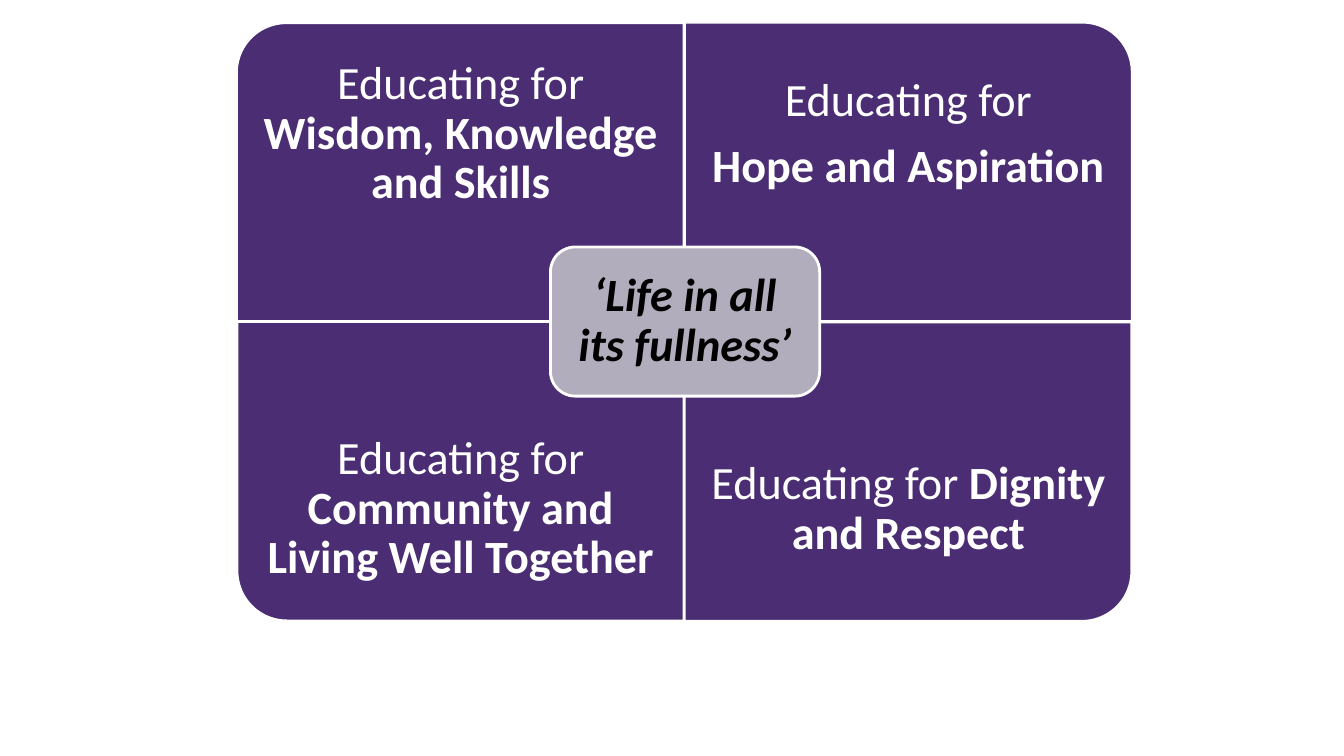
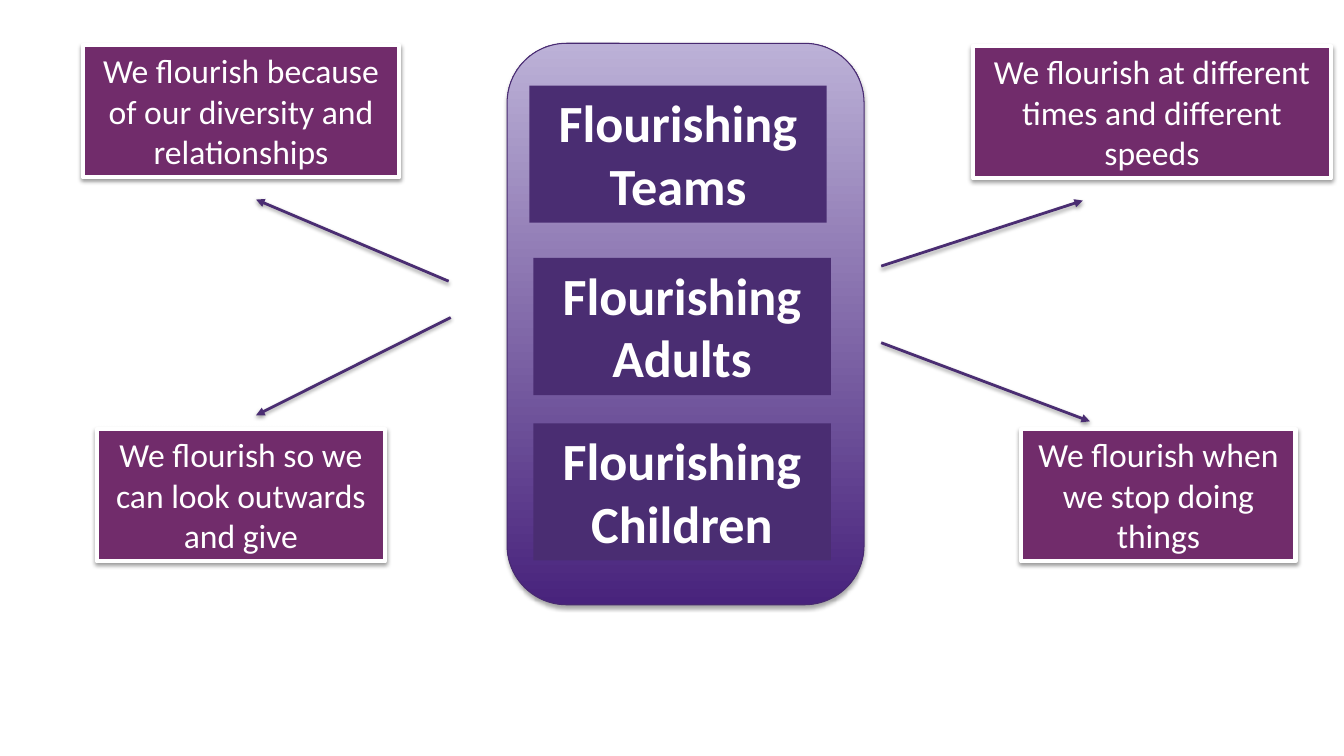
"""Build two slides on educating for fullness of life and on flourishing."""
from dataclasses import dataclass
from typing import Optional

from lxml import etree
from pptx import Presentation
from pptx.dml.color import RGBColor
from pptx.enum.shapes import MSO_CONNECTOR, MSO_SHAPE
from pptx.enum.text import MSO_ANCHOR, MSO_AUTO_SIZE, PP_ALIGN
from pptx.oxml.ns import qn
from pptx.shapes.autoshape import Shape
from pptx.slide import Slide
from pptx.util import Emu, Pt

RECT, ROUNDED = MSO_SHAPE.RECTANGLE, MSO_SHAPE.ROUNDED_RECTANGLE
ONE_ROUND = MSO_SHAPE.ROUND_1_RECTANGLE
STRAIGHT = MSO_CONNECTOR.STRAIGHT
TOP, MIDDLE = MSO_ANCHOR.TOP, MSO_ANCHOR.MIDDLE
GROW, FIXED = MSO_AUTO_SIZE.SHAPE_TO_FIT_TEXT, MSO_AUTO_SIZE.NONE
CENTER = PP_ALIGN.CENTER

PURPLE = RGBColor(0x4A, 0x2D, 0x72)
PLUM = RGBColor(0x71, 0x2C, 0x6B)
GREY = RGBColor(0xB2, 0xAD, 0xBC)
PANEL_DARK = RGBColor(0x48, 0x23, 0x7C)
PANEL_LIGHT = RGBColor(0xBC, 0xB1, 0xD7)
PANEL_EDGE = RGBColor(0x48, 0x2A, 0x71)
WHITE = RGBColor(0xFF, 0xFF, 0xFF)
BLACK = RGBColor(0x00, 0x00, 0x00)
FONT = "Calibri"
BLANK_LAYOUT = 6
EMU_PER_PX = 9144

GRID_LEFT, GRID_TOP = 235, 22
CELL_WIDTH, CELL_HEIGHT, CELL_TEXT_HEIGHT = 444, 297, 222
HUB_WIDTH, HUB_HEIGHT, HUB_MARGIN = 267, 148, 7


def px(length: float) -> Emu:
    """Turn px into EMU."""
    return Emu(round(length * EMU_PER_PX))


@dataclass(frozen=True)
class Frame:
    """Place and size in px."""

    left: int
    top: int
    width: int
    height: int

    def emu(self) -> tuple[Emu, Emu, Emu, Emu]:
        """Return the frame in EMU."""
        return px(self.left), px(self.top), px(self.width), px(self.height)


@dataclass(frozen=True)
class Span:
    """Run of text with its weight."""

    text: str
    bold: bool = False
    italic: bool = False


@dataclass(frozen=True)
class Quadrant:
    """Grid cell with the turn that puts its round corner outside."""

    column: int
    row: int
    rotation: int
    paras: list[list[Span]]


@dataclass(frozen=True)
class Callout:
    """Statement box and the arrow that points to it."""

    text: str
    frame: Frame
    start: tuple[int, int]
    end: tuple[int, int]


LEAD = "Educating for "
QUADRANTS = [
    Quadrant(0, 0, 270, [[Span(LEAD), Span("Wisdom, Knowledge and Skills", True)]]),
    Quadrant(1, 0, 0, [[Span(LEAD.strip())], [Span("Hope and Aspiration", True)]]),
    Quadrant(0, 1, 180, [[Span(LEAD), Span("Community and Living Well Together", True)]]),
    Quadrant(1, 1, 90, [[Span(LEAD), Span("Dignity and Respect", True)]]),
]
CALLOUTS = [
    Callout("We flourish so we can look outwards and give",
            Frame(96, 426, 286, 131), (447, 315), (254, 412)),
    Callout("We flourish because of our diversity and relationships",
            Frame(82, 45, 314, 131), (445, 279), (254, 198)),
    Callout("We flourish when we stop doing things",
            Frame(1013, 426, 272, 131), (874, 340), (1081, 418)),
    Callout("We flourish at different times and different speeds",
            Frame(965, 46, 355, 131), (874, 264), (1074, 199)),
]
PANEL = Frame(503, 43, 354, 557)
GROUPS = [
    ("Flourishing Teams", Frame(525, 85, 295, 136)),
    ("Flourishing Adults", Frame(529, 256, 295, 136)),
    ("Flourishing Children", Frame(529, 420, 295, 136)),
]


def write(box: Shape, paras: list[list[Span]], *, size: float,
          color: RGBColor = WHITE, anchor: MSO_ANCHOR = TOP,
          inset: Optional[int] = None, spacing: float = 1.0, gap: float = 0,
          fit: MSO_AUTO_SIZE = FIXED) -> None:
    """Write centred paragraphs into a box."""
    frame = box.text_frame
    frame.word_wrap = True
    frame.auto_size = fit
    frame.vertical_anchor = anchor
    if inset is not None:
        frame.margin_left = frame.margin_right = px(inset)
        frame.margin_top = frame.margin_bottom = px(inset)
    for index, spans in enumerate(paras):
        para = frame.add_paragraph() if index else frame.paragraphs[0]
        para.alignment = CENTER
        para.line_spacing = spacing
        if index:
            para.space_before = Pt(gap)
        for span in spans:
            run = para.add_run()
            run.text = span.text
            font = run.font
            font.name, font.size = FONT, Pt(size)
            font.bold, font.italic = span.bold, span.italic
            font.color.rgb = color


def add_box(slide: Slide, kind: MSO_SHAPE, frame: Frame, fill: Optional[RGBColor],
            line: Optional[RGBColor] = None, weight: float = 0) -> Shape:
    """Add a preset shape without a shadow."""
    box = slide.shapes.add_shape(kind, *frame.emu())
    box.shadow.inherit = False
    if fill is not None:
        box.fill.solid()
        box.fill.fore_color.rgb = fill
    if line is None:
        box.line.fill.background()
    else:
        box.line.color.rgb = line
        box.line.width = Pt(weight)
    return box


def add_shadow(properties: etree._Element, alpha: int, distance: float) -> None:
    """Put a soft shadow below a shape or connector."""
    effects = properties.find(qn("a:effectLst"))
    if effects is None:
        effects = etree.SubElement(properties, qn("a:effectLst"))
    shadow = etree.SubElement(effects, qn("a:outerShdw"), blurRad=str(Pt(3.1)),
                              dist=str(Pt(distance)), dir="5400000", rotWithShape="0")
    color = etree.SubElement(shadow, qn("a:srgbClr"), val=str(BLACK))
    etree.SubElement(color, qn("a:alpha"), val=str(alpha * 1000))


def add_arrow(slide: Slide, start: tuple[int, int], end: tuple[int, int]) -> None:
    """Add a shadowed arrow."""
    arrow = slide.shapes.add_connector(STRAIGHT, *map(px, start + end))
    arrow.line.color.rgb = PURPLE
    arrow.line.width = Pt(2)
    properties = arrow._element.spPr
    etree.SubElement(properties.find(qn("a:ln")), qn("a:tailEnd"), type="triangle")
    add_shadow(properties, 38, 1.6)


def add_quadrant(slide: Slide, quadrant: Quadrant) -> None:
    """Add a grid cell and its upright text."""
    left = GRID_LEFT + quadrant.column * CELL_WIDTH
    top = GRID_TOP + quadrant.row * CELL_HEIGHT
    cell = Frame(left, top, CELL_WIDTH, CELL_HEIGHT)
    if quadrant.rotation % 180:
        shift = (CELL_WIDTH - CELL_HEIGHT) // 2
        cell = Frame(left + shift, top - shift, CELL_HEIGHT, CELL_WIDTH)
    add_box(slide, ONE_ROUND, cell, PURPLE, WHITE, 2).rotation = quadrant.rotation
    text_top = top + quadrant.row * (CELL_HEIGHT - CELL_TEXT_HEIGHT)
    text = Frame(left, text_top, CELL_WIDTH, CELL_TEXT_HEIGHT)
    write(slide.shapes.add_textbox(*text.emu()), quadrant.paras, size=33,
          anchor=MIDDLE, inset=26, spacing=0.9, gap=11.5)


def build_values(slide: Slide) -> None:
    """Draw the four aims around the central phrase."""
    for quadrant in QUADRANTS:
        add_quadrant(slide, quadrant)
    hub = Frame(GRID_LEFT + CELL_WIDTH - HUB_WIDTH // 2,
                GRID_TOP + CELL_HEIGHT - HUB_HEIGHT // 2, HUB_WIDTH, HUB_HEIGHT)
    box = add_box(slide, ROUNDED, hub, GREY, WHITE, 2)
    write(box, [[Span("‘Life in all its fullness’", True, True)]], size=33,
          color=BLACK, anchor=MIDDLE, inset=14 + HUB_MARGIN // 2, spacing=0.9)


def build_flourishing(slide: Slide) -> None:
    """Draw the flourishing groups and the statements around them."""
    panel = add_box(slide, ROUNDED, PANEL, None, PANEL_EDGE, 0.75)
    panel.fill.gradient()
    panel.fill.gradient_angle = 90
    stops = panel.fill.gradient_stops
    for stop, position, color in zip(stops, (0, 1), (PANEL_DARK, PANEL_LIGHT)):
        stop.position = position
        stop.color.rgb = color
    add_shadow(panel._element.spPr, 35, 1.8)
    for text, frame in GROUPS:
        box = add_box(slide, RECT, frame, PURPLE)
        write(box, [[Span(text, True)]], size=37.3, fit=GROW)
    for callout in CALLOUTS:
        box = add_box(slide, RECT, callout.frame, PLUM, WHITE, 3)
        add_shadow(box._element.spPr, 38, 1.6)
        write(box, [[Span(callout.text)]], size=24, fit=GROW)
        add_arrow(slide, callout.start, callout.end)


def main() -> None:
    """Build and save the deck."""
    deck = Presentation()
    deck.slide_width, deck.slide_height = px(1333), px(750)
    for build in (build_values, build_flourishing):
        build(deck.slides.add_slide(deck.slide_layouts[BLANK_LAYOUT]))
    deck.save("out.pptx")


if __name__ == "__main__":
    main()
